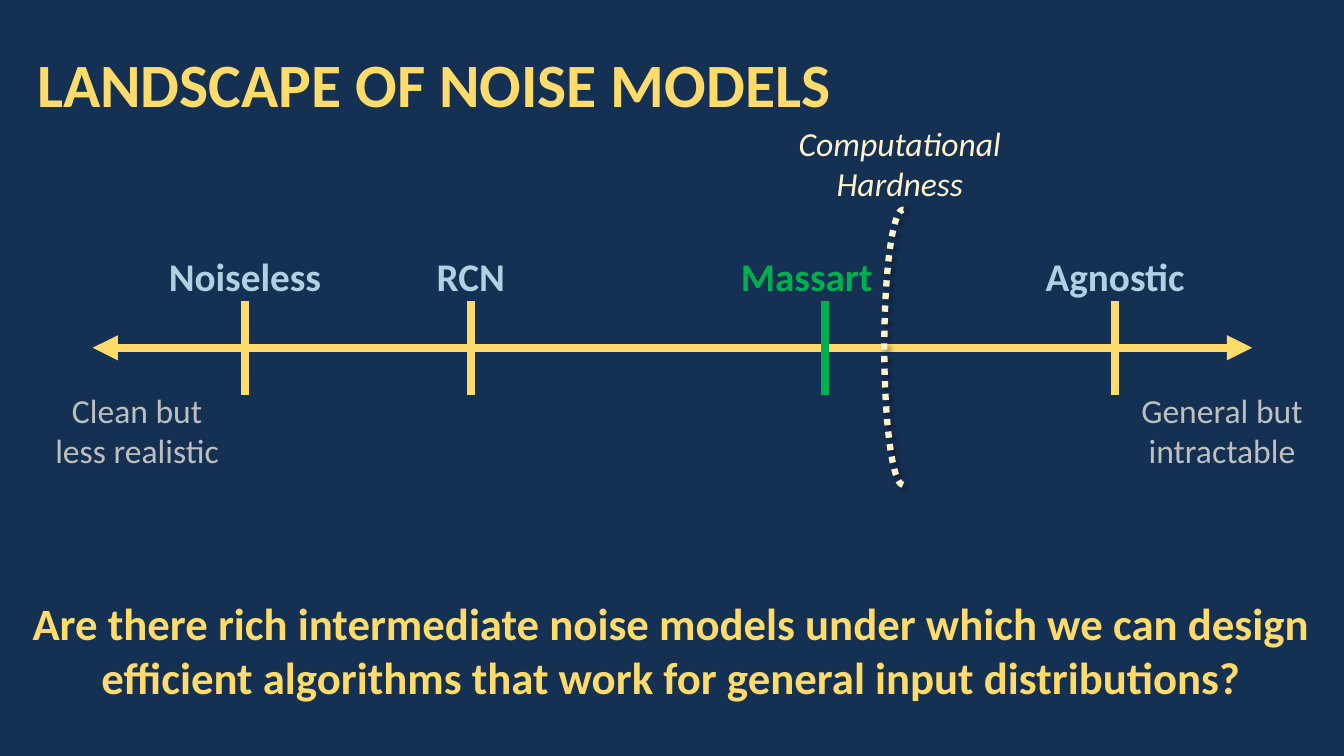
from collections import namedtuple
from dataclasses import dataclass

from lxml.etree import SubElement
from pptx import Presentation
from pptx.dml.color import RGBColor
from pptx.enum.dml import MSO_LINE
from pptx.enum.shapes import MSO_CONNECTOR, MSO_SHAPE
from pptx.enum.text import MSO_ANCHOR, MSO_AUTO_SIZE, PP_ALIGN
from pptx.oxml.ns import qn
from pptx.util import Inches, Pt

Box = namedtuple("Box", "left top width height")
Model = namedtuple("Model", "name position label_width label_shift label_color tick_color")


@dataclass(frozen=True)
class Theme:
    font: str = "Calibri"
    background: RGBColor = RGBColor.from_string("143053")
    accent: RGBColor = RGBColor.from_string("FEDB6A")
    label: RGBColor = RGBColor.from_string("B1D1E3")
    highlight: RGBColor = RGBColor.from_string("00B050")
    hardness: RGBColor = RGBColor.from_string("FFF3CD")
    remark: RGBColor = RGBColor.from_string("BFBFBF")
    title_size: int = 44
    question_size: int = 32
    label_size: int = 28
    remark_size: int = 24
    axis_width: float = 6
    boundary_width: float = 4.5


THEME = Theme()

# Positions are inches from the left end of the axis.
MODELS = [
    Model("Noiseless", 1.51, 1.73, 0, THEME.label, THEME.accent),
    Model("RCN", 3.75, 0.89, 0, THEME.label, THEME.accent),
    Model("Massart", 7.26, 1.52, -0.18, THEME.highlight, THEME.highlight),
    Model("Agnostic", 10.14, 1.6, 0, THEME.label, THEME.accent),
]


def add_text(slide, box, lines, size, color, align=PP_ALIGN.CENTER, wrap=True,
             anchor=MSO_ANCHOR.TOP, line_spacing=None, **font_format):
    shape = slide.shapes.add_textbox(*map(Inches, box))
    frame = shape.text_frame
    frame_format = {"word_wrap": wrap, "vertical_anchor": anchor,
                    "auto_size": MSO_AUTO_SIZE.NONE}
    for name, value in frame_format.items():
        setattr(frame, name, value)
    frame.text = "\n".join(lines)
    font_format = {"name": THEME.font, "size": Pt(size), **font_format}
    for paragraph in frame.paragraphs:
        paragraph.alignment = align
        paragraph.line_spacing = line_spacing
        font = paragraph.runs[0].font
        for name, value in font_format.items():
            setattr(font, name, value)
        font.color.rgb = color


def add_line(slide, start, end, color, arrowheads=False):
    line = slide.shapes.add_connector(MSO_CONNECTOR.STRAIGHT, *map(Inches, start + end))
    line.line.color.rgb = color
    line.line.width = Pt(THEME.axis_width)
    properties = line._element.spPr
    if arrowheads:
        for tag in ("a:headEnd", "a:tailEnd"):
            SubElement(properties.find(qn("a:ln")), qn(tag), type="triangle")
    SubElement(properties, qn("a:effectLst"))


def add_soft_shadow(shape):
    shape.shadow.inherit = False
    effects = shape._element.spPr.find(qn("a:effectLst"))
    shadow = SubElement(effects, qn("a:outerShdw"), blurRad=str(Pt(4)), dist=str(Pt(3)),
                        dir="2700000", algn="tl", rotWithShape="0")
    color = SubElement(shadow, qn("a:srgbClr"), val="000000")
    SubElement(color, qn("a:alpha"), val="40000")


def add_title(slide, box):
    add_text(slide, box, ["LANDSCAPE OF NOISE MODELS"], THEME.title_size, THEME.accent,
             align=PP_ALIGN.LEFT, anchor=MSO_ANCHOR.MIDDLE, line_spacing=0.9, bold=True)


def add_noise_axis(slide, box):
    """Draw the double-headed axis with a labelled tick for each noise model."""
    axis_y = box.top + 1
    add_line(slide, (box.left, axis_y), (box.left + box.width, axis_y),
             THEME.accent, arrowheads=True)
    for model in MODELS:
        x = box.left + model.position
        add_line(slide, (x, box.top + 0.54), (x, box.top + box.height), model.tick_color)
        label_left = x + model.label_shift - model.label_width / 2
        add_text(slide, Box(label_left, box.top, model.label_width, 0.57), [model.name],
                 THEME.label_size, model.label_color, wrap=False, bold=True)


def add_hardness_boundary(slide, box):
    """Draw the dotted arc that opens to the right, with its caption above."""
    caption_height = 0.91
    add_text(slide, Box(box.left, box.top, box.width, caption_height),
             ["Computational", "Hardness"], THEME.remark_size, THEME.hardness,
             wrap=False, italic=True)
    arc_box = Box(box.left + 0.96, box.top + caption_height, 0.37, box.height - caption_height)
    arc = slide.shapes.add_shape(MSO_SHAPE.ARC, *map(Inches, arc_box))
    arc.adjustments[0] = 162
    arc.adjustments[1] = 54.1
    arc.rotation = 180
    arc.fill.background()
    arc.line.color.rgb = THEME.hardness
    arc.line.width = Pt(THEME.boundary_width)
    arc.line.dash_style = MSO_LINE.ROUND_DOT
    add_soft_shadow(arc)


def add_end_remarks(slide, box):
    """Put one remark at each end of the box."""
    width = 2.06
    remarks = {box.left: "Clean but less realistic",
               box.left + box.width - width: "General but intractable"}
    for left, remark in remarks.items():
        add_text(slide, Box(left, box.top, width, box.height), [remark],
                 THEME.remark_size, THEME.remark)


def add_question(slide, box):
    question = ("Are there rich intermediate noise models under which we can design "
                "efficient algorithms that work for general input distributions?")
    add_text(slide, box, [question], THEME.question_size, THEME.accent, bold=True)


def main():
    presentation = Presentation()
    presentation.slide_width = Inches(13.33)
    presentation.slide_height = Inches(7.5)
    slide = presentation.slides.add_slide(presentation.slide_layouts[6])
    slide.background.fill.solid()
    slide.background.fill.fore_color.rgb = THEME.background

    add_title(slide, Box(0.27, 0.31, 12.8, 1.11))
    add_noise_axis(slide, Box(0.92, 2.45, 11.5, 1.47))
    add_hardness_boundary(slide, Box(7.81, 1.17, 2.23, 3.64))
    add_end_remarks(slide, Box(0.33, 3.82, 12.82, 0.91))
    add_question(slide, Box(0.22, 5.86, 12.88, 1.18))
    presentation.save("out.pptx")


if __name__ == "__main__":
    main()
